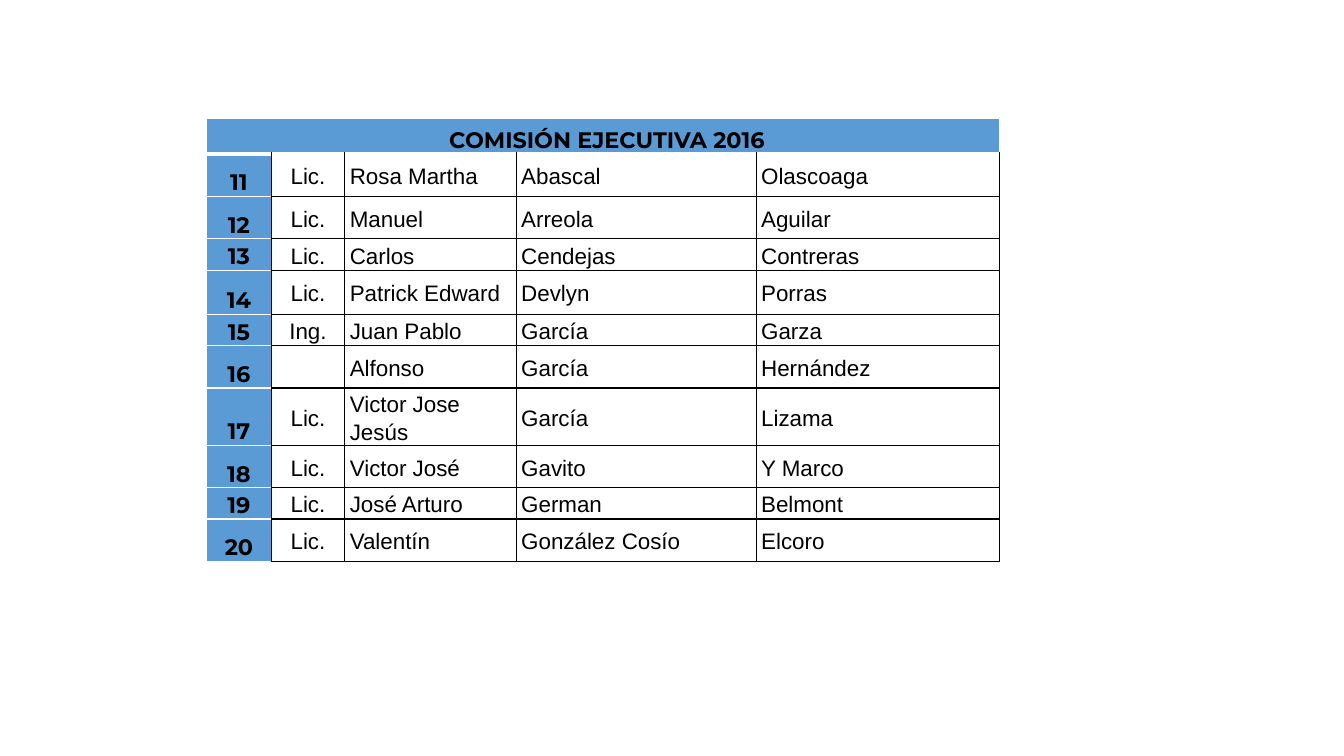
import dataclasses
import typing

import lxml.etree
import pptx
import pptx.dml.color
import pptx.enum.text
import pptx.oxml.ns
import pptx.util

PX = 9144  # EMU per px, at 100 px to the inch
ALIGN = pptx.enum.text.PP_ALIGN
ANCHOR = pptx.enum.text.MSO_ANCHOR


@dataclasses.dataclass(frozen=True)
class Theme:
    blue: str = "5B9BD5"
    black: str = "000000"
    white: str = "FFFFFF"
    heading_font: str = "Montserrat"
    body_font: str = "Arial"
    text_size: int = 16
    line_spacing: float = 1.15


THEME = Theme()


class Border(typing.NamedTuple):
    color: str
    points: int


class Member(typing.NamedTuple):
    height: int
    title: str
    names: str
    first_surname: str
    second_surname: str


@dataclasses.dataclass(frozen=True)
class CellStyle:
    font: str
    bold: bool
    align: ALIGN
    anchor: ANCHOR
    fill: typing.Optional[str]
    borders: dict[str, Border]
    margin_left: int = 5


# Content
HEADING = "COMISIÓN EJECUTIVA 2016"
HEADING_HEIGHT = 36
FIRST_NUMBER = 11
COLUMN_WIDTHS = (64, 73, 170, 238, 241)
MEMBERS = (
    Member(42, "Lic.", "Rosa Martha", "Abascal", "Olascoaga"),
    Member(42, "Lic.", "Manuel", "Arreola", "Aguilar"),
    Member(22, "Lic.", "Carlos", "Cendejas", "Contreras"),
    Member(44, "Lic.", "Patrick Edward", "Devlyn", "Porras"),
    Member(22, "Ing.", "Juan Pablo", "García", "Garza"),
    Member(42, "", "Alfonso", "García", "Hernández"),
    Member(44, "Lic.", "Victor Jose Jesús", "García", "Lizama"),
    Member(42, "Lic.", "Victor José", "Gavito", "Y Marco"),
    Member(22, "Lic.", "José Arturo", "German", "Belmont"),
    Member(42, "Lic.", "Valentín", "González Cosío", "Elcoro"),
)

# Cell styles
THIN_WHITE = Border(THEME.white, 1)
THIN_BLACK = Border(THEME.black, 1)
THICK_WHITE = Border(THEME.white, 3)
HEADING_STYLE = CellStyle(
    THEME.heading_font, True, ALIGN.CENTER, ANCHOR.BOTTOM, THEME.blue,
    {"L": THIN_WHITE, "R": THIN_WHITE, "T": THIN_WHITE, "B": THICK_WHITE}, 13)
NUMBER_STYLE = CellStyle(
    THEME.heading_font, True, ALIGN.CENTER, ANCHOR.BOTTOM, THEME.blue,
    {"L": THIN_WHITE, "R": THIN_BLACK, "T": THIN_WHITE, "B": THIN_WHITE})
NAME_STYLE = CellStyle(
    THEME.body_font, False, ALIGN.LEFT, ANCHOR.MIDDLE, None,
    dict.fromkeys("LRTB", THIN_BLACK))
TITLE_STYLE = dataclasses.replace(NAME_STYLE, align=ALIGN.CENTER)
MEMBER_STYLES = (NUMBER_STYLE, TITLE_STYLE, NAME_STYLE, NAME_STYLE, NAME_STYLE)


def below_heading(style: CellStyle) -> CellStyle:
    """Share the heading's thick lower border with the row under it."""
    return dataclasses.replace(style, borders={**style.borders, "T": THICK_WHITE})


def set_attributes(target: typing.Any, values: dict[str, typing.Any]) -> None:
    for name, value in values.items():
        setattr(target, name, value)


def draw_borders(cell: typing.Any, borders: dict[str, Border]) -> None:
    properties = cell._tc.get_or_add_tcPr()
    qn = pptx.oxml.ns.qn
    for side, border in borders.items():
        line = lxml.etree.SubElement(
            properties, qn(f"a:ln{side}"), w=str(pptx.util.Pt(border.points)))
        fill = lxml.etree.SubElement(line, qn("a:solidFill"))
        lxml.etree.SubElement(fill, qn("a:srgbClr"), val=border.color)


def fill_cell(cell: typing.Any, text: str, style: CellStyle) -> None:
    set_attributes(cell, {
        "text": text,
        "vertical_anchor": style.anchor,
        "margin_left": style.margin_left * PX,
        "margin_right": 5 * PX,
        "margin_top": 0,
        "margin_bottom": 0,
    })
    draw_borders(cell, style.borders)
    if style.fill:
        cell.fill.solid()
        cell.fill.fore_color.rgb = pptx.dml.color.RGBColor.from_string(style.fill)
    else:
        cell.fill.background()
    paragraph = cell.text_frame.paragraphs[0]
    set_attributes(paragraph, {
        "alignment": style.align, "line_spacing": THEME.line_spacing})
    for font in [paragraph.font] + [run.font for run in paragraph.runs]:
        set_attributes(font, {
            "name": style.font,
            "size": pptx.util.Pt(THEME.text_size),
            "bold": style.bold,
        })
        font.color.rgb = pptx.dml.color.RGBColor.from_string(THEME.black)


def add_committee_table(slide: typing.Any) -> None:
    heights = [HEADING_HEIGHT] + [member.height for member in MEMBERS]
    table = slide.shapes.add_table(
        len(heights), len(COLUMN_WIDTHS), 205 * PX, 117 * PX,
        sum(COLUMN_WIDTHS) * PX, sum(heights) * PX).table
    set_attributes(table, {"first_row": False, "horz_banding": False})
    for column, width in zip(table.columns, COLUMN_WIDTHS):
        column.width = width * PX
    for row, height in zip(table.rows, heights):
        row.height = height * PX

    # Heading across all columns
    for index, cell in enumerate(table.rows[0].cells):
        fill_cell(cell, "" if index else HEADING, HEADING_STYLE)
    table.cell(0, 0).merge(table.cell(0, len(COLUMN_WIDTHS) - 1))

    # One row for each member
    for row_index, member in enumerate(MEMBERS, start=1):
        texts = (str(FIRST_NUMBER + row_index - 1), *member[1:])
        for column_index, (text, style) in enumerate(zip(texts, MEMBER_STYLES)):
            if row_index == 1:
                style = below_heading(style)
            fill_cell(table.cell(row_index, column_index), text, style)


def main() -> None:
    presentation = pptx.Presentation()
    set_attributes(presentation, {
        "slide_width": 1333 * PX, "slide_height": 750 * PX})
    slide = presentation.slides.add_slide(presentation.slide_layouts[6])
    add_committee_table(slide)
    presentation.save("out.pptx")


if __name__ == "__main__":
    main()
